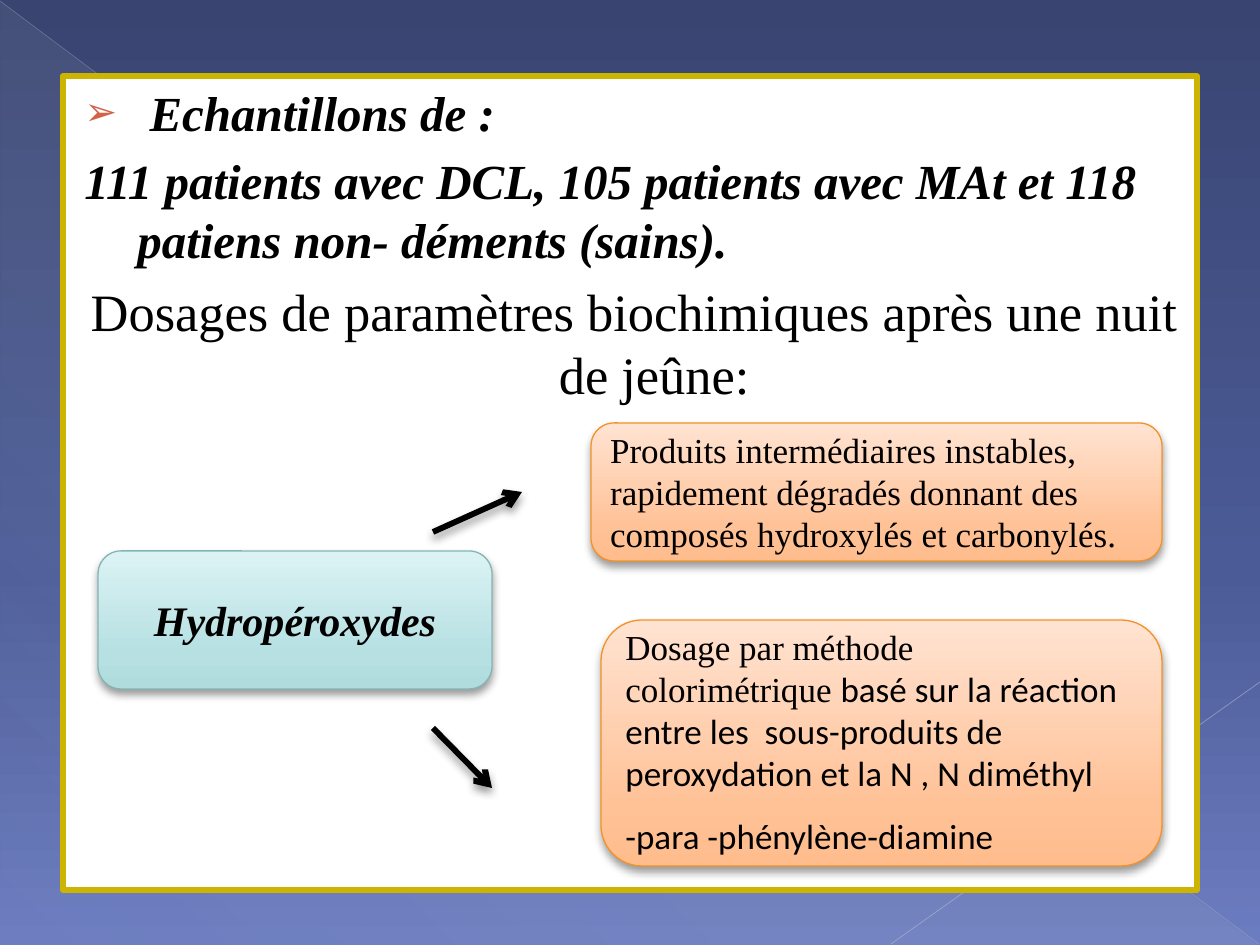
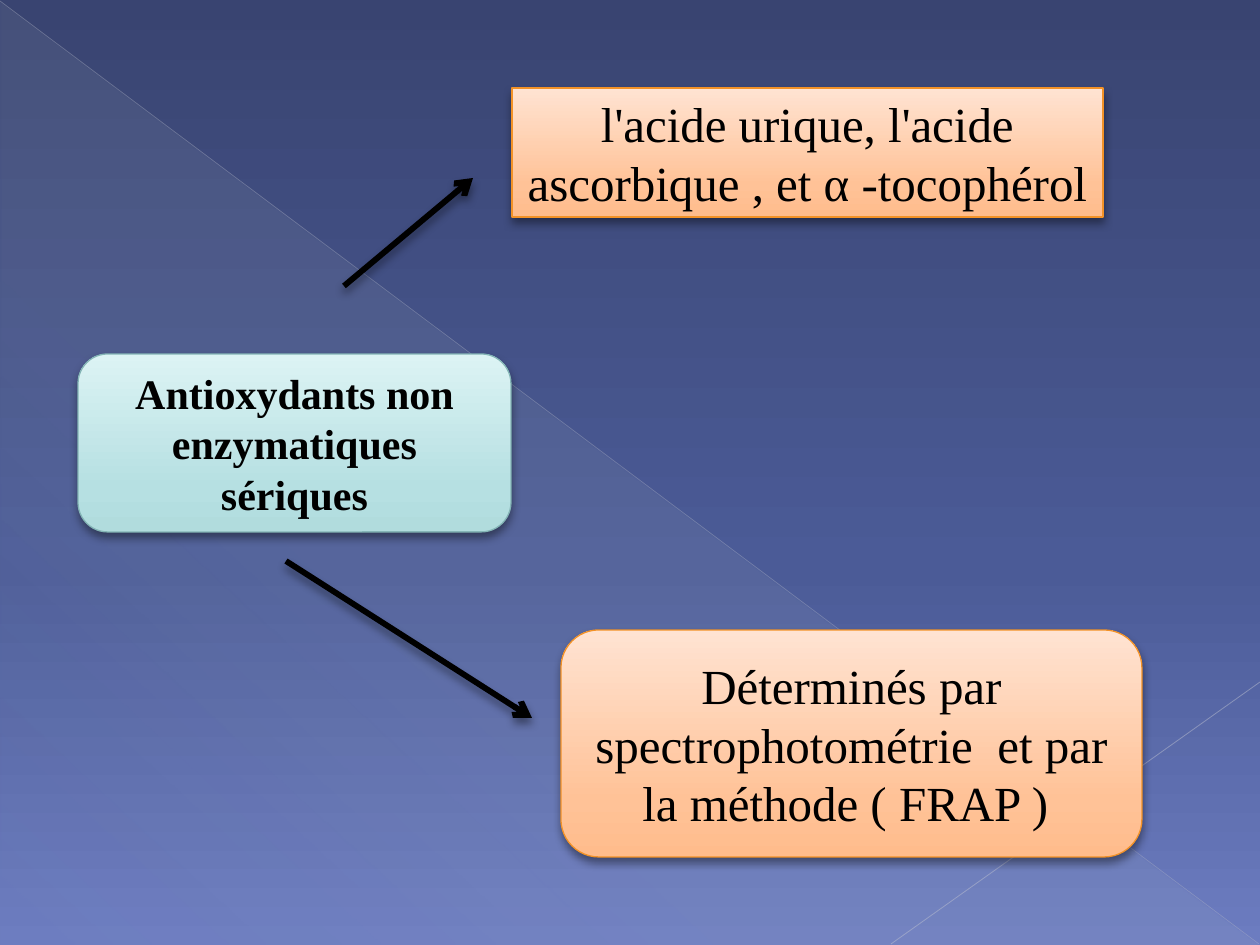
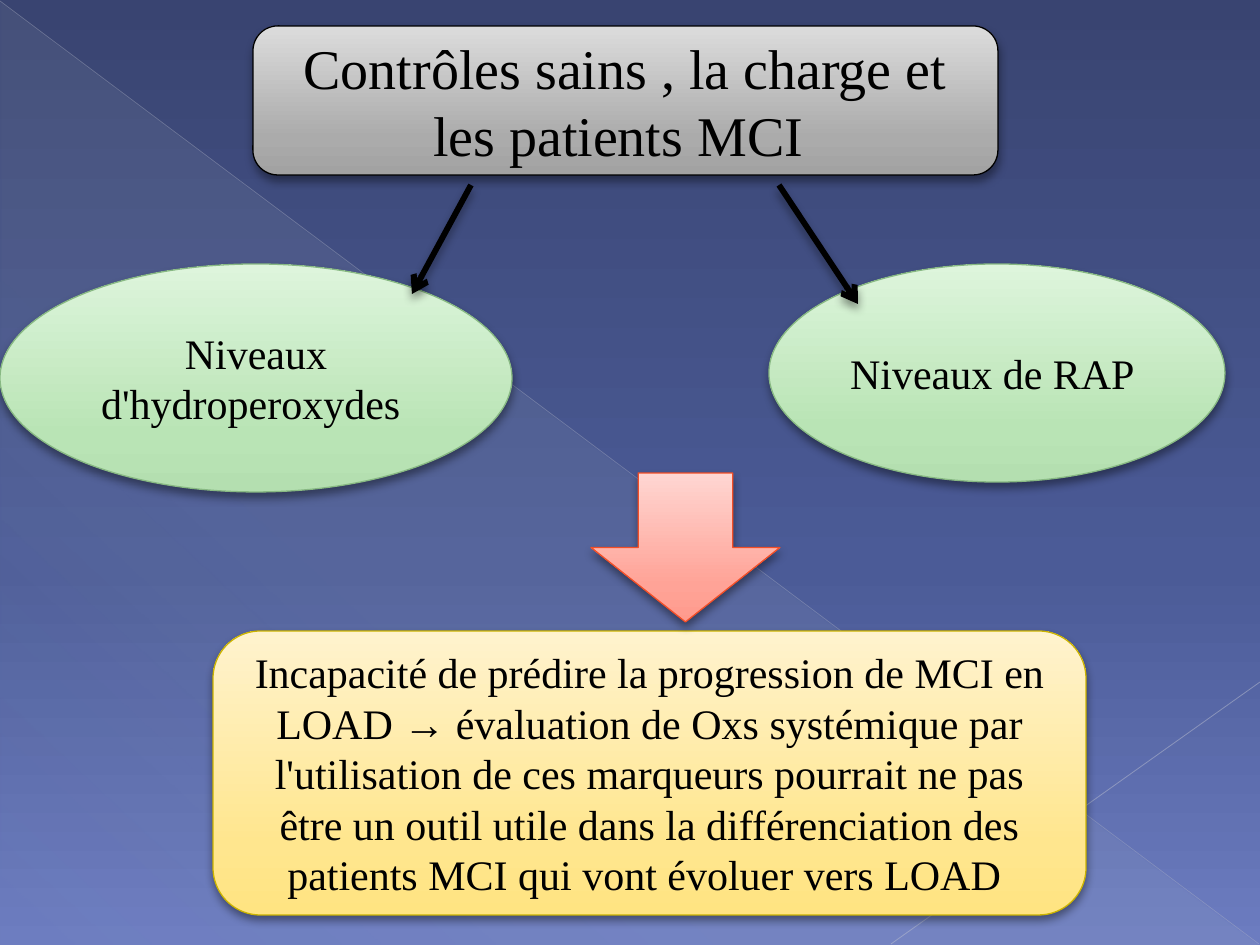
from lxml.etree import SubElement
from pptx import Presentation
from pptx.dml.color import RGBColor
from pptx.enum.shapes import MSO_CONNECTOR, MSO_SHAPE as SHAPE
from pptx.enum.text import MSO_AUTO_SIZE, MSO_ANCHOR, PP_ALIGN as ALIGN
from pptx.oxml.ns import qn
from pptx.util import Inches, Pt

# Scale and shared look
PX = Inches(1) / 126
BLACK = RGBColor(0, 0, 0)
WHITE = RGBColor(255, 255, 255)
GOLD = RGBColor(0xCC, 0xB4, 0x00)
BULLET = RGBColor(0xD1, 0x63, 0x49)
RAY = RGBColor(0xBA, 0xBE, 0xCD)
RAY_LOW = RGBColor(0xC2, 0xC5, 0xD2)
SERIF, SANS = "Times New Roman", "Calibri"
THICK = 3.35
BACKGROUND = [(0, "394471"), (60, "4B5B97"), (100, "6C7CC0")]
GLOW = [(0, "C5D1D7", 10), (70, "C5D1D7", 8), (100, "C5D1D7", 1)]

# Box styles: gradient colours at 0, 25 and 100 %, then the outline
STYLES = {
    "teal": (("B1DCDD", "B6E0E2", "DCF3F4"), RGBColor(0x84, 0xB5, 0xB6)),
    "orange": (("FFBC8C", "FFC297", "FFE3D2"), RGBColor(0xF3, 0x92, 0x27)),
    "green": (("B4DFB0", "B9E4B5", "DEF5DC"), RGBColor(0x88, 0xB9, 0x83)),
    "grey": (("A2A2A2", "ABABAB", "DCDCDC"), BLACK),
    "yellow": (("FFE482", "FFE68E", "FFF3CE"), GOLD),
    "red": (("FF9A8C", "FFA397", "FFD6D2"), RGBColor(0xF3, 0x4E, 0x27)),
}

# Content: boxes are (shape, style, place, alignment, runs)
STRONG = {"size": 28, "bold": True, "italic": True}
BODY_AT = (63, 76, 1134, 814)
BODY = [
    ("➢", ALIGN.LEFT, [(" ", {"size": 28}), ("Echantillons de :", STRONG)]),
    (None, ALIGN.LEFT, [("111 patients avec DCL, 105 patients avec MAt et 118 "
                         "patiens non- déments (sains).", STRONG)]),
    (None, ALIGN.CENTER, [("Dosages de paramètres biochimiques après une nuit "
                           "de jeûne: ", {"size": 30})]),
]
SLIDES = [
    {
        "body": BODY,
        "boxes": [
            (SHAPE.ROUNDED_RECTANGLE, "teal", (98, 551, 394, 138), ALIGN.CENTER,
             [("Hydropéroxydes", {"size": 24, "bold": True, "italic": True})]),
            (SHAPE.ROUNDED_RECTANGLE, "orange", (591, 423, 571, 138), ALIGN.LEFT,
             [("Produits intermédiaires instables, rapidement dégradés donnant "
               "des composés hydroxylés et carbonylés.", {"size": 20})]),
            (SHAPE.ROUNDED_RECTANGLE, "orange", (601, 620, 561, 246), ALIGN.LEFT,
             [("Dosage par méthode  colorimétrique ", {"size": 20}),
              ("basé sur la réaction entre les  sous-produits de peroxydation "
               "et la N , N diméthyl -para -phénylène-diamine",
               {"size": 20, "name": SANS}),
              (" ", {"size": 32, "name": SANS})]),
        ],
        "arrows": [(433, 532, 522, 492), (433, 728, 492, 788)],
    },
    {
        "boxes": [
            (SHAPE.ROUNDED_RECTANGLE, "teal", (78, 354, 433, 178), ALIGN.CENTER,
             [("Antioxydants non enzymatiques sériques",
               {"size": 24, "bold": True})]),
            (SHAPE.RECTANGLE, "orange", (512, 88, 591, 129), ALIGN.CENTER,
             [("l'acide urique, l'acide ascorbique , et α -tocophérol ",
               {"size": 28})]),
            (SHAPE.ROUNDED_RECTANGLE, "orange", (561, 630, 581, 227), ALIGN.CENTER,
             [("Déterminés par spectrophotométrie  et par la méthode ( FRAP ) ",
               {"size": 28})]),
        ],
        "arrows": [(344, 286, 473, 178), (286, 561, 532, 718)],
    },
    {
        "boxes": [
            (SHAPE.OVAL, "green", (0, 264, 512, 228), ALIGN.CENTER,
             [("Niveaux d'hydroperoxydes ", {"size": 24})]),
            (SHAPE.OVAL, "green", (769, 264, 456, 218), ALIGN.CENTER,
             [("Niveaux de RAP ", {"size": 24})]),
            (SHAPE.ROUNDED_RECTANGLE, "grey", (253, 26, 745, 149), ALIGN.CENTER,
             [("Contrôles sains , la charge et les patients MCI ", {"size": 32})]),
            (SHAPE.ROUNDED_RECTANGLE, "yellow", (213, 631, 873, 284), ALIGN.CENTER,
             [("Incapacité de prédire la progression de MCI en LOAD → évaluation "
               "de Oxs systémique par l'utilisation de ces marqueurs pourrait ne "
               "pas être un outil utile dans la différenciation des patients MCI "
               "qui vont évoluer vers LOAD ", {"size": 24})]),
            (SHAPE.DOWN_ARROW, "red", (591, 473, 189, 149), ALIGN.CENTER, []),
        ],
        "arrows": [(471, 185, 412, 294), (779, 185, 858, 304)],
    },
]


def emu(values):
    return [round(v * PX) for v in values]


# Formatting helpers
def add_tag(parent, tag, **attrs):
    return SubElement(parent, qn(tag), {k: str(v) for k, v in attrs.items()})


def set_gradient(fill, holder, stops, angle):
    fill.gradient()
    grad = holder.find(qn("a:gradFill"))
    gs_list = grad.find(qn("a:gsLst"))
    for gs in list(gs_list):
        gs_list.remove(gs)
    for pos, colour, *alpha in stops:
        gs = add_tag(gs_list, "a:gs", pos=pos * 1000)
        clr = add_tag(gs, "a:srgbClr", val=colour)
        for a in alpha:
            add_tag(clr, "a:alpha", val=a * 1000)
    grad.find(qn("a:lin")).set("ang", str(angle * 60000))


def add_shadow(effects):
    shadow = add_tag(effects, "a:outerShdw", blurRad=Pt(5.2), dist=Pt(3),
                     dir=90 * 60000, rotWithShape=0)
    add_tag(add_tag(shadow, "a:srgbClr", val=BLACK), "a:alpha", val=40000)


def set_line(line, colour, width):
    line.color.rgb = colour
    line.width = Pt(width)


def add_runs(p, runs):
    for text, fmt in runs:
        r = p.add_run()
        r.text = text
        r.font.color.rgb = BLACK
        for key, value in {"name": SERIF, **fmt}.items():
            setattr(r.font, key, Pt(value) if key == "size" else value)


# Drawing helpers
def add_line(s, ends, colour, width):
    c = s.shapes.add_connector(MSO_CONNECTOR.STRAIGHT, *emu(ends))
    set_line(c.line, colour, width)
    sp_pr = c._element.spPr
    return c, sp_pr.find(qn("a:ln")), add_tag(sp_pr, "a:effectLst")


def add_arrow(s, ends):
    _, ln, effects = add_line(s, ends, BLACK, THICK)
    add_tag(ln, "a:tailEnd", type="arrow")
    add_shadow(effects)


def add_box(s, kind, style, at, align, runs):
    colours, outline = STYLES[style]
    sp = s.shapes.add_shape(kind, *emu(at))
    sp_pr = sp._element.spPr
    set_gradient(sp.fill, sp_pr, zip((0, 25, 100), colours), 270)
    set_line(sp.line, outline, 0.75)
    sp.shadow.inherit = False
    add_shadow(sp_pr.find(qn("a:effectLst")))
    p = sp.text_frame.paragraphs[0]
    p.alignment = align
    add_runs(p, runs)


def fill_body(s, paragraphs):
    title = s.shapes.title._element
    title.getparent().remove(title)
    sp = s.placeholders[1]
    sp.left, sp.top, sp.width, sp.height = emu(BODY_AT)
    sp.fill.solid()
    sp.fill.fore_color.rgb = WHITE
    set_line(sp.line, GOLD, THICK)
    tf = sp.text_frame
    tf.auto_size = MSO_AUTO_SIZE.NONE
    tf.vertical_anchor = MSO_ANCHOR.TOP
    for i, (bullet, align, runs) in enumerate(paragraphs):
        p = tf.paragraphs[0] if i == 0 else tf.add_paragraph()
        p.alignment = align
        p_pr = p._p.get_or_add_pPr()
        p_pr.set("marL", str(Inches(0.49)))
        p_pr.set("indent", str(Inches(-0.42)))
        if bullet:
            add_tag(add_tag(p_pr, "a:buClr"), "a:srgbClr", val=BULLET)
            add_tag(p_pr, "a:buSzPct", val=80000)
            add_tag(p_pr, "a:buChar", char=bullet)
        else:
            add_tag(p_pr, "a:buNone")
        add_runs(p, runs)


def decorate_master(master, s):
    """Draw the shared decoration on s, then move it to the master."""
    bg = master.background
    set_gradient(bg.fill, master._element.cSld.bg.bgPr, BACKGROUND, 90)
    glow = s.shapes.add_shape(SHAPE.RIGHT_TRIANGLE, *emu((1, 2, 1258, 943)))
    set_gradient(glow.fill, glow._element.spPr, GLOW, 133)
    glow.line.fill.background()
    glow.shadow.inherit = False
    parts = [glow]
    for ends, colour, width, alpha in (((0, 1, 1259, 944), RAY, 0.39, 35),
                                       ((1260, 682, 891, 944), RAY_LOW, 0.47, 45)):
        c, ln, _ = add_line(s, ends, colour, width)
        add_tag(ln.find(".//" + qn("a:srgbClr")), "a:alpha", val=alpha * 1000)
        parts.append(c)
    for i, part in enumerate(parts):
        el = part._element
        el.find(".//" + qn("p:cNvPr")).set("id", str(101 + i))
        master.shapes._spTree.insert(2 + i, el)


def main():
    prs = Presentation()
    prs.slide_width, prs.slide_height = Inches(10), Inches(7.5)
    for i, content in enumerate(SLIDES):
        body = content.get("body")
        s = prs.slides.add_slide(prs.slide_layouts[1 if body else 6])
        if i == 0:
            decorate_master(prs.slide_master, s)
        if body:
            fill_body(s, body)
        for box in content["boxes"]:
            add_box(s, *box)
        for ends in content["arrows"]:
            add_arrow(s, ends)
    prs.save("out.pptx")


if __name__ == "__main__":
    main()
